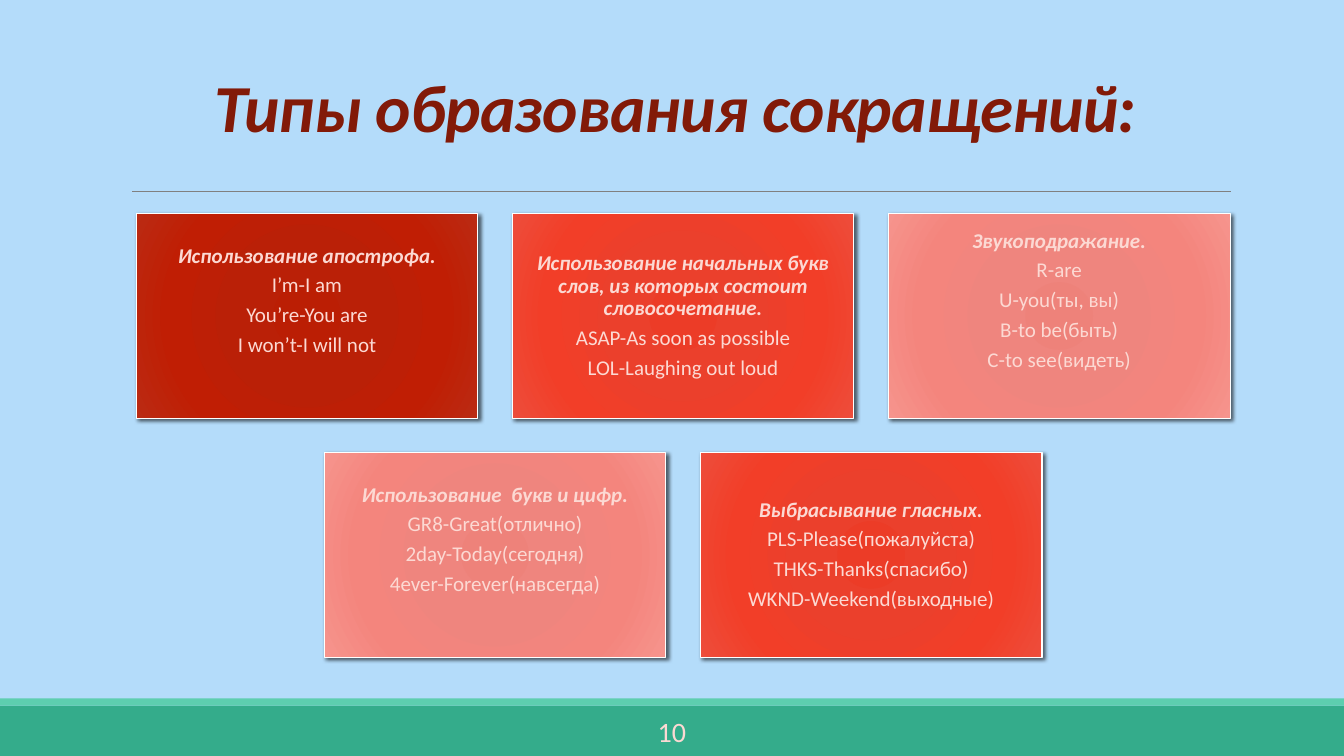
from lxml import etree
from pptx import Presentation
from pptx.dml.color import RGBColor
from pptx.enum import shapes, text
from pptx.oxml import parse_xml
from pptx.oxml.ns import nsdecls, qn
from pptx.util import Inches, Pt


def rgb(value):
    return RGBColor.from_string(value)


def add_run(p, words, size, color, bold=False):
    r = p.add_run()
    r.text = words
    r.font.name = "Calibri"
    r.font.size = Pt(size)
    r.font.color.rgb = rgb(color)
    r.font.bold = r.font.italic = bold
    return r


prs = Presentation()
prs.slide_width, prs.slide_height = Inches(13.33), Inches(7.5)
s = prs.slides.add_slide(prs.slide_layouts[6])
s.background.fill.solid()
s.background.fill.fore_color.rgb = rgb("B4DCFA")

# Footer bands
for top, height, color in [(7, 0.5, "34AC8B"), (6.93, 0.07, "5DCEAF")]:
    band = s.shapes.add_shape(shapes.MSO_SHAPE.RECTANGLE, 0, Inches(top),
                              prs.slide_width, Inches(height))
    band.shadow.inherit = False
    band.fill.solid()
    band.fill.fore_color.rgb = rgb(color)
    band.line.fill.background()

# Rule under the title
rule = s.shapes.add_connector(shapes.MSO_CONNECTOR.STRAIGHT, Inches(1.31),
                              Inches(1.9), Inches(12.21), Inches(1.9))
rule.line.color.rgb = rgb("808080")
rule.line.width = Pt(0.5)
etree.SubElement(rule._element.spPr, qn("a:effectLst"))

# Title and page number
labels = [
    ("Типы образования сокращений:", (1.2, 0.31, 11, 1.6), 48, "821A08", True),
    ("10", (4.03, 7.06, 5.27, 0.4), 20, "FCD9D3", False),
]
for words, box, size, color, is_title in labels:
    tf = s.shapes.add_textbox(*[Inches(v) for v in box]).text_frame
    tf.word_wrap = True
    tf.vertical_anchor = text.MSO_ANCHOR.MIDDLE
    p = tf.paragraphs[0]
    p.alignment = text.PP_ALIGN.CENTER
    r = add_run(p, words, size, color, is_title)
    if is_title:
        p.line_spacing = 0.85
        r.font._element.set("spc", "-50")

# Cards: gradient colours, bottom inset, heading followed by examples
DARK = ["BB1E04", "BA2007", "C01E04", "BA2B13"]
RED = ["EC3C27", "EB402C", "F23E28", "ED4D3B"]
PINK = ["EE827A", "EF857E", "F4857D", "F6948D"]
rows = [
    [
        (DARK, 0.36, ["Использование апострофа.", "I’m-I am",
                      "You’re-You are", "I won’t-I will not"]),
        (RED, 0.06, ["Использование начальных букв слов, из которых состоит "
                     "словосочетание.", "ASAP-As soon as possible",
                     "LOL-Laughing out loud"]),
        (PINK, 0.36, ["Звукоподражание.", "R-are", "U-you(ты, вы)",
                      "B-to be(быть)", "C-to see(видеть)"]),
    ],
    [
        (PINK, 0.36, ["Использование  букв и цифр.", "GR8-Great(отлично)",
                      "2day-Today(сегодня)", "4ever-Forever(навсегда)"]),
        (RED, 0.06, ["Выбрасывание гласных.", "PLS-Please(пожалуйста)",
                     "THKS-Thanks(спасибо)", "WKND-Weekend(выходные)"]),
    ],
]
CARD_W, CARD_H, GAP, CENTER = 3.39, 2.03, 0.34, 6.775

for i, row in enumerate(rows):
    left = CENTER - (len(row) * (CARD_W + GAP) - GAP) / 2
    top = 2.12 + i * (CARD_H + GAP)
    for j, (colors, bottom, lines) in enumerate(row):
        sp = s.shapes.add_shape(
            shapes.MSO_SHAPE.RECTANGLE, Inches(left + j * (CARD_W + GAP)),
            Inches(top), Inches(CARD_W), Inches(CARD_H))
        sp.line.color.rgb = rgb("FFFFFF")
        sp.line.width = Pt(0.75)

        # Radial gradient and soft shadow
        stops = "".join(
            f'<a:gs pos="{pos}000"><a:srgbClr val="{color}"/></a:gs>'
            for pos, color in zip((0, 34, 70, 100), colors))
        sp._element.spPr.find(qn("a:ln")).addprevious(parse_xml(
            f'<a:gradFill {nsdecls("a")} rotWithShape="1">'
            f'<a:gsLst>{stops}</a:gsLst><a:path path="circle"><a:fillToRect '
            'l="100000" t="100000" r="100000" b="100000"/></a:path>'
            '</a:gradFill>'))
        sp.shadow.inherit = False
        sp._element.spPr.find(qn("a:effectLst")).append(parse_xml(
            f'<a:outerShdw {nsdecls("a")} blurRad="38100" dist="25400" '
            'dir="2700000" rotWithShape="0"><a:srgbClr val="000000">'
            '<a:alpha val="60000"/></a:srgbClr></a:outerShdw>'))

        # Card text
        tf = sp.text_frame
        tf.word_wrap = True
        tf.vertical_anchor = text.MSO_ANCHOR.MIDDLE
        tf.margin_left = tf.margin_right = tf.margin_top = Inches(0.06)
        tf.margin_bottom = Inches(bottom)
        for n, words in enumerate(lines):
            p = tf.add_paragraph() if n else tf.paragraphs[0]
            p.alignment = text.PP_ALIGN.CENTER
            p.line_spacing = 0.9
            p.space_after = Pt(5)
            add_run(p, words, 15, "FCD9D3", n == 0)

prs.save("out.pptx")
